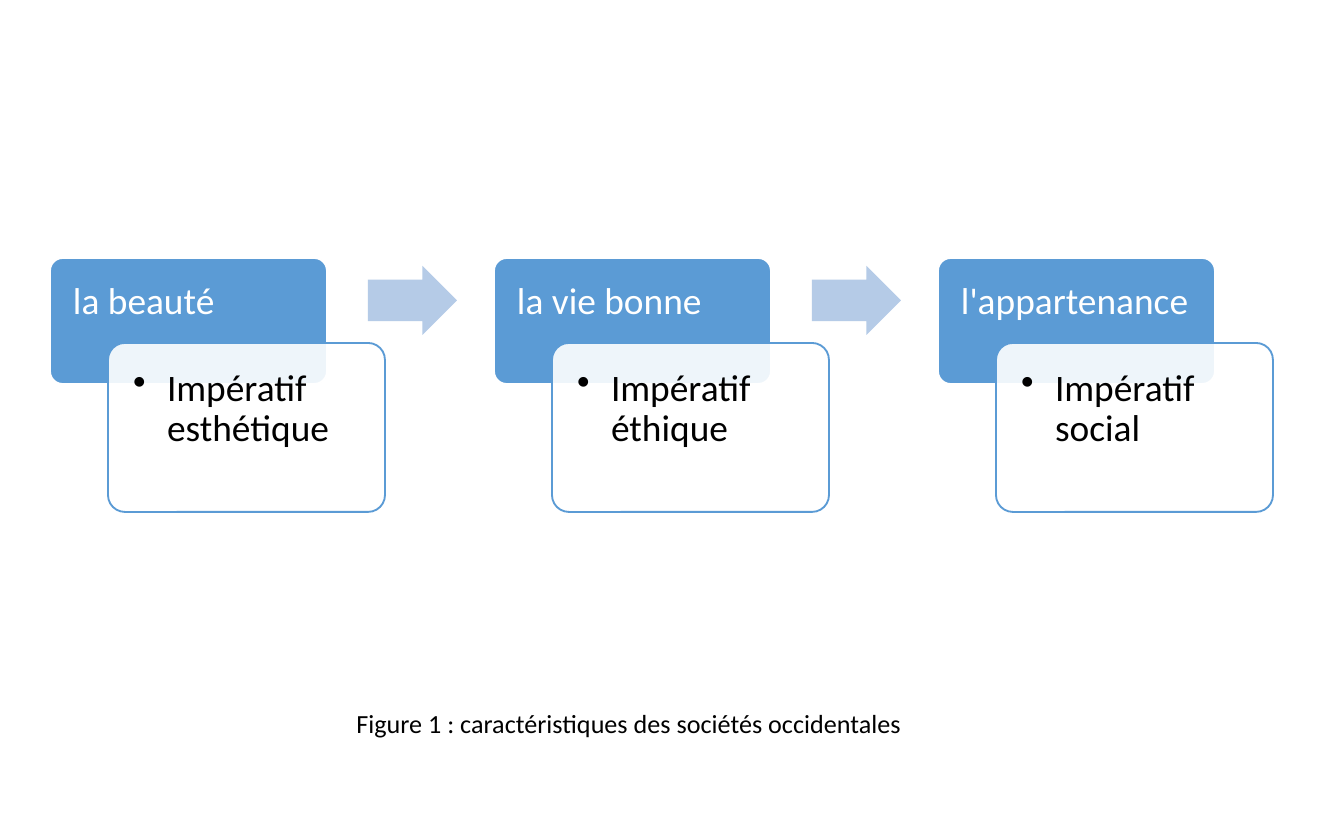
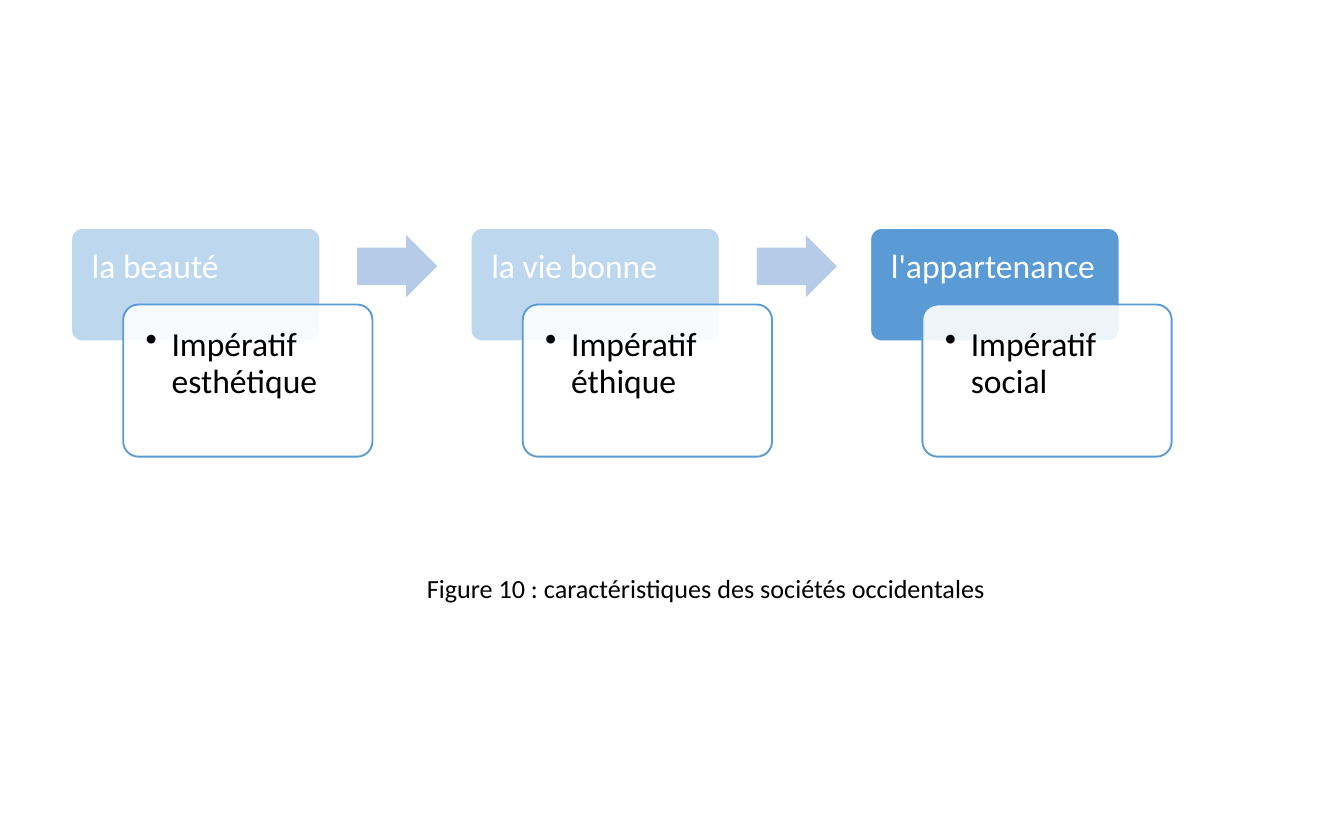
"""Build two slides showing the three imperatives of Western societies as a chain."""
from dataclasses import dataclass

from lxml.etree import SubElement
from pptx import Presentation
from pptx.dml.color import RGBColor
from pptx.enum.shapes import MSO_SHAPE
from pptx.enum.text import MSO_AUTO_SIZE, PP_ALIGN
from pptx.oxml.ns import qn
from pptx.util import Pt

STAGES = [
    ("la beauté", "Impératif esthétique"),
    ("la vie bonne", "Impératif éthique"),
    ("l'appartenance", "Impératif social"),
]

DIAGRAMS = [
    {"caption": "Figure 1 : caractéristiques des sociétés occidentales",
     "caption_at": (293, 698), "origin": (50, 258), "scale": 1,
     "indent": 34, "faded": ()},
    {"caption": "Figure 10 : caractéristiques des sociétés occidentales",
     "caption_at": (370, 563), "origin": (71, 228), "scale": 0.9,
     "indent": 26, "faded": (0, 1)},
]

SLIDE_SIZE = (1344, 840)
CAPTION_SIZE = (672, 46)
STAGE_STEP = 444
HEADING = (0, 0, 277, 126)
HEADING_TEXT = (2, 3, 271, 79)
DETAIL = (58, 85, 277, 169)
DETAIL_TEXT = (62, 90, 266, 160)
ARROW = (318, 8, 89, 69)
HEADING_INSETS = (21, 21, 21, 11)
DETAIL_INSETS = (21, 21, 21, 21)
CAPTION_INSETS = (13, 7, 13, 7)


@dataclass(frozen=True)
class Theme:
    font: str = "Calibri"
    accent: str = "5B9BD5"
    faded: str = "BDD7EE"
    arrow: str = "B5CBE7"
    white: str = "FFFFFF"
    black: str = "000000"
    stage_size: int = 20
    caption_size: int = 14


THEME = Theme()


def px(length):
    return round(length * 914400 / 134.4)


def place(frame, origin, scale):
    left, top, width, height = (length * scale for length in frame)
    return [px(length) for length in (origin[0] + left, origin[1] + top, width, height)]


def add_block(slide, kind, box, fill, line=None, adjustments=(0.1,), opacity=None):
    shape = slide.shapes.add_shape(kind, *box)
    shape.shadow.inherit = False
    for index, adjustment in enumerate(adjustments):
        shape.adjustments[index] = adjustment
    shape.fill.solid()
    shape.fill.fore_color.rgb = RGBColor.from_string(fill)
    if opacity:
        color = shape.fill._xPr.find(".//" + qn("a:srgbClr"))
        SubElement(color, qn("a:alpha"), val=str(opacity * 1000))
    if line:
        shape.line.color.rgb = RGBColor.from_string(line)
        shape.line.width = Pt(1)
    else:
        shape.line.fill.background()


def add_bullet(paragraph, indent):
    properties = paragraph._p.get_or_add_pPr()
    properties.set("marL", str(px(indent)))
    properties.set("indent", str(-px(indent)))
    SubElement(properties, qn("a:buChar"), char="•")


def add_text(slide, box, text, size, color, insets, line_spacing=0.9, indent=None):
    text_box = slide.shapes.add_textbox(*box)
    frame = text_box.text_frame
    frame.word_wrap = True
    frame.margin_left, frame.margin_top, frame.margin_right, frame.margin_bottom = map(px, insets)
    frame.text = text
    paragraph = frame.paragraphs[0]
    paragraph.line_spacing = line_spacing
    if indent:
        add_bullet(paragraph, indent)
    font = paragraph.runs[0].font
    font.name = THEME.font
    font.size = Pt(size)
    font.color.rgb = RGBColor.from_string(color)
    return frame


def add_stage(slide, diagram, index):
    heading, detail = STAGES[index]
    scale = diagram["scale"]
    left, top = diagram["origin"]
    origin = (left + index * STAGE_STEP * scale, top)
    size = round(THEME.stage_size * scale)
    heading_insets = [inset * scale for inset in HEADING_INSETS]
    detail_insets = [inset * scale for inset in DETAIL_INSETS]
    fill = THEME.faded if index in diagram["faded"] else THEME.accent

    add_block(slide, MSO_SHAPE.ROUNDED_RECTANGLE, place(HEADING, origin, scale), fill, THEME.white)
    add_text(slide, place(HEADING_TEXT, origin, scale), heading, size, THEME.white, heading_insets)
    add_block(slide, MSO_SHAPE.ROUNDED_RECTANGLE, place(DETAIL, origin, scale),
              THEME.white, THEME.accent, opacity=90)
    add_text(slide, place(DETAIL_TEXT, origin, scale), detail, size, THEME.black,
             detail_insets, indent=diagram["indent"])
    if index < len(STAGES) - 1:
        add_block(slide, MSO_SHAPE.RIGHT_ARROW, place(ARROW, origin, scale),
                  THEME.arrow, adjustments=(0.6, 0.5))


def add_caption(slide, diagram):
    box = [px(length) for length in diagram["caption_at"] + CAPTION_SIZE]
    frame = add_text(slide, box, diagram["caption"], THEME.caption_size, THEME.black,
                     CAPTION_INSETS, line_spacing=1.07)
    frame.auto_size = MSO_AUTO_SIZE.SHAPE_TO_FIT_TEXT
    frame.paragraphs[0].alignment = PP_ALIGN.CENTER
    frame.paragraphs[0].space_after = Pt(8)


def main():
    presentation = Presentation()
    presentation.slide_width, presentation.slide_height = map(px, SLIDE_SIZE)
    for diagram in DIAGRAMS:
        slide = presentation.slides.add_slide(presentation.slide_layouts[6])
        for index in range(len(STAGES)):
            add_stage(slide, diagram, index)
        add_caption(slide, diagram)
    presentation.save("out.pptx")


if __name__ == "__main__":
    main()
